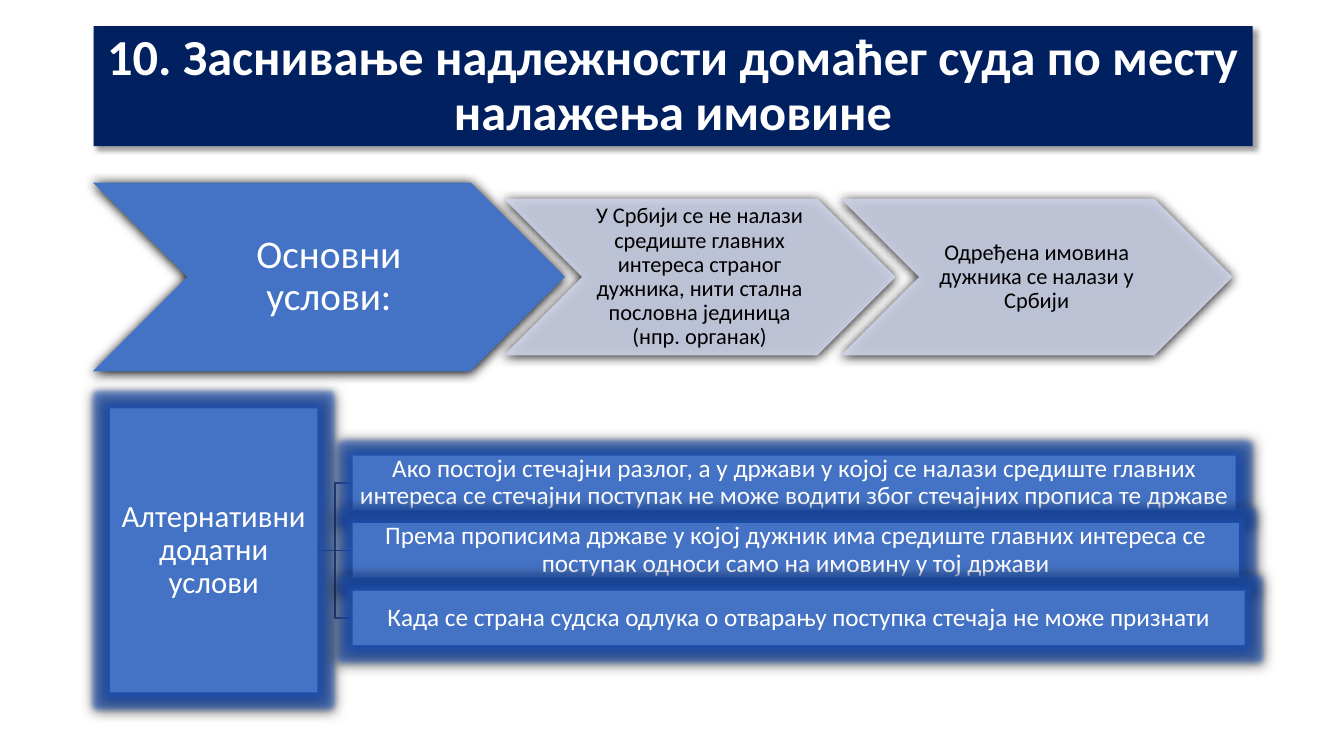
from lxml.etree import SubElement
from pptx import Presentation
from pptx.dml.color import RGBColor
from pptx.enum.shapes import MSO_CONNECTOR as CXN, MSO_SHAPE as SHAPE
from pptx.enum.text import MSO_ANCHOR as ANCHOR, PP_ALIGN as ALIGN
from pptx.oxml import parse_xml
from pptx.oxml.ns import nsdecls, qn
from pptx.util import Cm, Pt

NAVY = RGBColor(0x00, 0x20, 0x60)
BLUE = RGBColor(0x44, 0x72, 0xC4)
GLOW = RGBColor(0x20, 0x57, 0xC0)
LINE = RGBColor(0x36, 0x5B, 0x9D)
PALE = RGBColor(0xCF, 0xD5, 0xEA)
WHITE = RGBColor(0xFF, 0xFF, 0xFF)
BLACK = RGBColor(0x00, 0x00, 0x00)

TITLE = "10. Заснивање надлежности домаћег суда по месту налажења имовине"
BASIC = "Основни услови:"
BASIC_CONDITIONS = [
    "У Србији се не налази средиште главних интереса страног дужника, "
    "нити стална пословна јединица (нпр. органак)",
    "Одређена имовина дужника се налази у Србији",
]
EXTRA = "Алтернативни додатни услови"
EXTRA_CONDITIONS = [  # text and box width in cm
    ("Ако постоји стечајни разлог, а у држави у којој се налази средиште главних "
     "интереса се стечајни поступак не може водити због стечајних прописа те државе", 22.25),
    ("Према прописима државе у којој дужник има средиште главних интереса се "
     "поступак односи само на имовину у тој држави", 22.33),
    ("Када се страна судска одлука о отварању поступка стечаја не може признати", 22.48),
]


def add_effects(sp, blur=8.5, dist=1, angle=90, alpha=100, glow=False):
    """Give the shape an outer shadow and, if asked, a blue glow."""
    sp.shadow.inherit = False
    effects = sp._element.spPr.find(qn("a:effectLst"))
    if glow:
        effects.append(parse_xml(
            f'<a:glow {nsdecls("a")} rad="{Pt(8)}"><a:srgbClr val="{GLOW}">'
            '<a:alpha val="60000"/></a:srgbClr></a:glow>'))
    effects.append(parse_xml(
        f'<a:outerShdw {nsdecls("a")} blurRad="{Pt(blur)}" dist="{Pt(dist)}" '
        f'dir="{angle * 60000}" algn="ctr" rotWithShape="0"><a:srgbClr val="{BLACK}">'
        f'<a:alpha val="{alpha * 1000}"/></a:srgbClr></a:outerShdw>'))


def fill_shape(sp, color):
    sp.fill.solid()
    sp.fill.fore_color.rgb = color
    sp.line.fill.background()


def set_text(sp, text, size, color, inset, anchor=ANCHOR.MIDDLE, bold=False):
    tf = sp.text_frame
    tf.text = text
    tf.word_wrap = True
    tf.vertical_anchor = anchor
    tf.margin_left = tf.margin_right = Cm(inset)
    tf.margin_top = tf.margin_bottom = Cm(min(inset, 0.12))
    p = tf.paragraphs[0]
    p.alignment = ALIGN.CENTER
    p.line_spacing = 0.9
    p.font.name = "Calibri"
    p.font.size = Pt(size)
    p.font.bold = bold
    p.font.color.rgb = color


def add_title(s, left, top, width, height):
    sp = s.shapes.title
    sp.left, sp.top, sp.width, sp.height = Cm(left), Cm(top), Cm(width), Cm(height)
    fill_shape(sp, NAVY)
    add_effects(sp, blur=4, dist=3, angle=45, alpha=40)
    set_text(sp, TITLE, 36, WHITE, 0.25, ANCHOR.BOTTOM, bold=True)


def add_chevron(s, left, middle, height, text, size, fill, color):
    sp = s.shapes.add_shape(SHAPE.CHEVRON, Cm(left), Cm(middle - height / 2),
                            Cm(2.5 * height), Cm(height))
    fill_shape(sp, fill)
    add_effects(sp)
    set_text(sp, text, size, color, 0.2)
    return sp


def add_chevron_row(s, left, top, height):
    """A large heading chevron followed by smaller, overlapping ones."""
    middle = top + height / 2
    add_chevron(s, left, middle, height, BASIC, 28, BLUE, WHITE)
    left += 2.5 * height * 0.87
    small = 0.83 * height
    for text in BASIC_CONDITIONS:
        sp = add_chevron(s, left, middle, small, text, 16, PALE, BLACK)
        clr = sp._element.spPr.find(qn("a:solidFill"))[0]
        SubElement(clr, qn("a:alpha"), val="90000")
        left += 2.5 * small * 0.86


def add_box(s, left, top, width, height, text, size, inset):
    sp = s.shapes.add_shape(SHAPE.RECTANGLE, Cm(left), Cm(top), Cm(width), Cm(height))
    fill_shape(sp, BLUE)
    add_effects(sp, glow=True)
    set_text(sp, text, size, WHITE, inset)


def add_branch(s, x1, y1, x2, y2):
    kind = CXN.STRAIGHT if abs(y1 - y2) < 0.01 else CXN.ELBOW
    cxn = s.shapes.add_connector(kind, Cm(x1), Cm(y1), Cm(x2), Cm(y2))
    cxn.line.color.rgb = LINE
    cxn.line.width = Pt(1)
    SubElement(cxn._element.spPr, qn("a:effectLst"))


def add_condition_tree(s, left, top, width, height):
    """A tall label box with branches to a centred stack of conditions."""
    item_height, gap, branch = 1.37, 0.33, 0.89
    step = item_height + gap
    right, middle = left + width, top + height / 2
    count = len(EXTRA_CONDITIONS)
    centers = [middle + (i - (count - 1) / 2) * step for i in range(count)]
    for y in centers:
        add_branch(s, right, middle, right + branch, y)
    add_box(s, left, top, width, height, EXTRA, 22, 0.05)
    for (text, item_width), y in zip(EXTRA_CONDITIONS, centers):
        add_box(s, right + branch, y - item_height / 2, item_width, item_height,
                text, 18, 0.03)


def main():
    prs = Presentation()
    prs.slide_width, prs.slide_height = Cm(33.87), Cm(19.05)
    s = prs.slides.add_slide(prs.slide_layouts[5])
    add_title(s, 2.36, 0.66, 29.21, 3.02)
    add_chevron_row(s, 2.34, 4.6, 4.76)
    add_condition_tree(s, 2.77, 10.29, 5.23, 7.16)
    prs.save("out.pptx")


if __name__ == "__main__":
    main()
